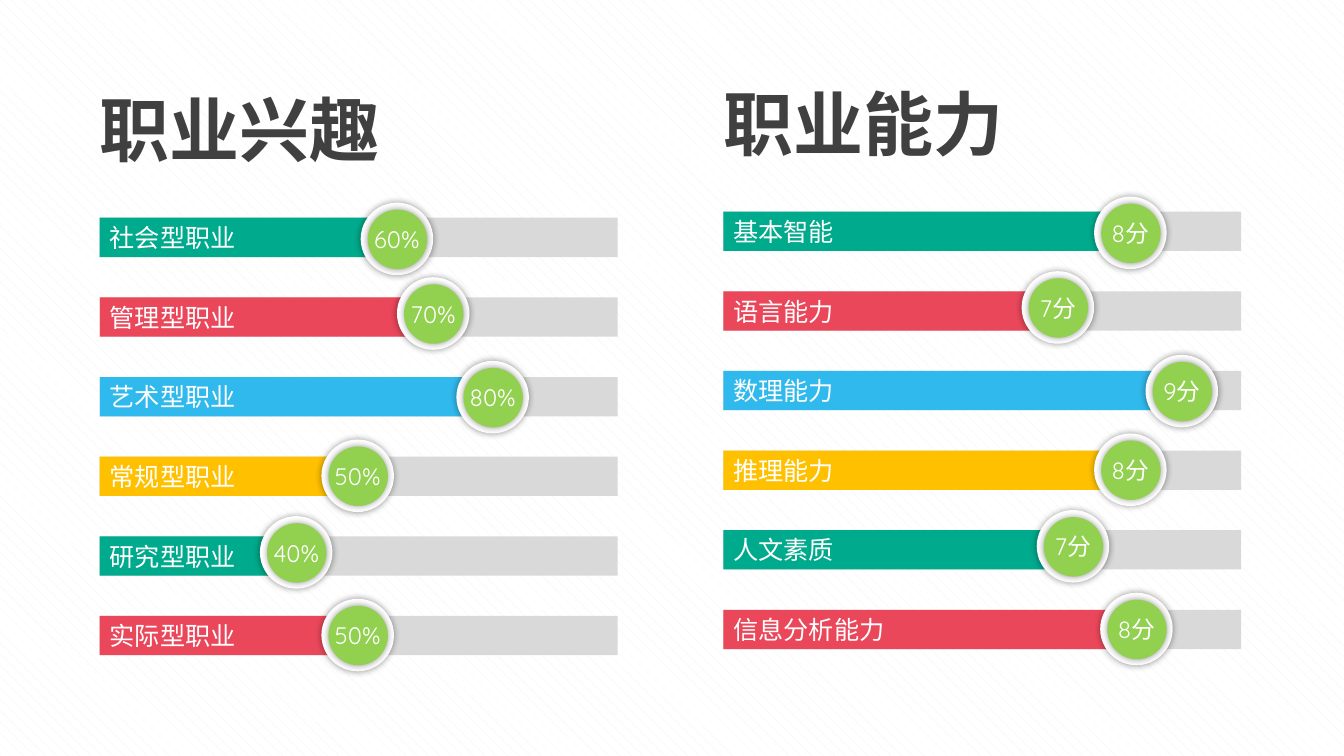
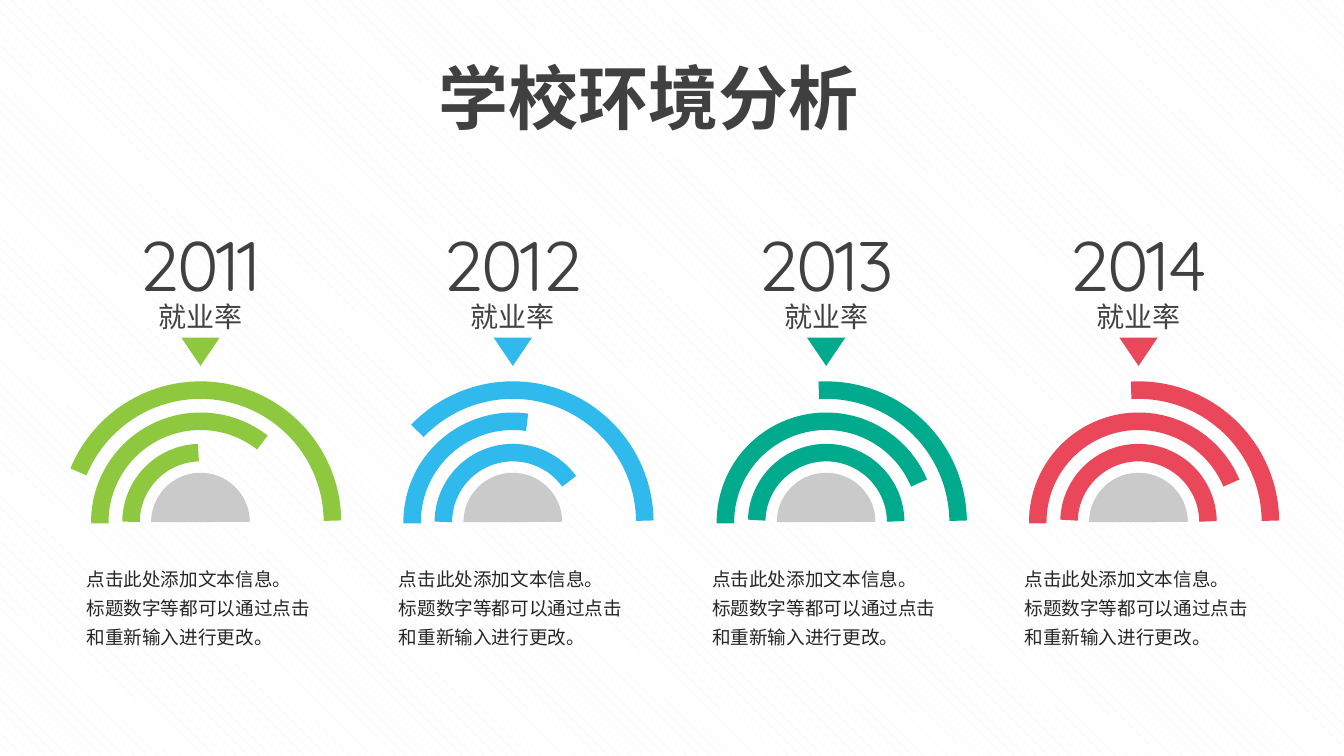
from lxml import etree
from pptx import Presentation
from pptx.dml.color import RGBColor
from pptx.enum import dml, shapes, text
from pptx.oxml.ns import qn
from pptx.util import Pt

SCALE = 9144  # EMU per px, 100 px to the inch
WIDTH, HEIGHT = 1334, 750
CJK, LATIN = "Noto Sans CJK SC", "Quicksand"
COLORS = {
    "white": "FFFFFF", "stripe": "F2F2F2", "track": "D9D9D9", "dome": "CACACA",
    "title": "404040", "body": "262626", "black": "000000", "knob": "92D050",
    "teal": "00AA8C", "red": "EB475B", "blue": "30B9EC", "yellow": "FFC000",
    "green": "8EC83E",
}
# Each style: font values, colour, then optional paragraph values and tracking
STYLES = {
    "title": {"font": {"name": CJK, "size": Pt(50), "bold": True}, "color": "title"},
    "bar": {"font": {"name": CJK, "size": Pt(18)}, "color": "white"},
    "knob": {"font": {"name": LATIN, "size": Pt(17)}, "color": "white"},
    "year": {"font": {"name": LATIN, "size": Pt(50)}, "color": "title", "track": "-150"},
    "caption": {"font": {"name": CJK, "size": Pt(20)}, "color": "title"},
    "body": {"font": {"name": CJK, "size": Pt(13.3)}, "color": "body",
             "para": {"line_spacing": 1.3}},
}
MSO = shapes.MSO_SHAPE
LEFT, CENTER = text.PP_ALIGN.LEFT, text.PP_ALIGN.CENTER


def px(*values):
    return [v * SCALE for v in values]


def rgb(name):
    return RGBColor.from_string(COLORS[name])


class Deck:
    def __init__(self):
        self.prs = Presentation()
        self.prs.slide_width, self.prs.slide_height = px(WIDTH, HEIGHT)
        # Striped background shared by every slide
        fill = self.prs.slide_master.background.fill
        fill.patterned()
        fill.pattern = dml.MSO_PATTERN.SHINGLE
        fill.fore_color.rgb, fill.back_color.rgb = rgb("stripe"), rgb("white")

    def slide(self):
        self.s = self.prs.slides.add_slide(self.prs.slide_layouts[6])
        self.ungroup()

    def group(self):
        self.target = self.s.shapes.add_group_shape().shapes

    def ungroup(self):
        self.target = self.s.shapes

    def set_text(self, tf, lines, style, align):
        st = STYLES[style]
        for i, line in enumerate(lines):
            p = tf.paragraphs[0] if i == 0 else tf.add_paragraph()
            for key, value in {"alignment": align, **st.get("para", {})}.items():
                setattr(p, key, value)
            r = p.add_run()
            r.text = line
            for key, value in st["font"].items():
                setattr(r.font, key, value)
            r.font.color.rgb = rgb(st["color"])
            rpr = r._r.get_or_add_rPr()
            etree.SubElement(rpr, qn("a:ea"), typeface=CJK)
            if "track" in st:
                rpr.set("spc", st["track"])

    def label(self, box, lines, style, align=LEFT, wrap=True):
        tf = self.target.add_textbox(*px(*box)).text_frame
        tf.word_wrap = wrap
        tf.auto_size = text.MSO_AUTO_SIZE.SHAPE_TO_FIT_TEXT
        self.set_text(tf, lines, style, align)

    def shape(self, kind, box, color, rotation=0):
        sp = self.target.add_shape(kind, *px(*box))
        sp.shadow.inherit = False
        sp.fill.solid()
        sp.fill.fore_color.rgb = rgb(color)
        sp.line.fill.background()
        sp.rotation = rotation
        return sp

    def bar(self, box, color, caption):
        tf = self.shape(MSO.RECTANGLE, box, color).text_frame
        tf.vertical_anchor = text.MSO_ANCHOR.MIDDLE
        self.set_text(tf, [caption], "bar", LEFT)

    def disc(self, x, y, size, color):
        sp = self.shape(MSO.OVAL, (x, y, size, size), color)
        effects = sp._element.spPr.find(qn("a:effectLst"))
        glow = etree.SubElement(effects, qn("a:outerShdw"), blurRad=str(Pt(5)),
                                dist="0", dir="0", algn="ctr", rotWithShape="0")
        clr = etree.SubElement(glow, qn("a:srgbClr"), val=COLORS["black"])
        etree.SubElement(clr, qn("a:alpha"), val="40000")

    def knob(self, x, y, value):
        self.group()
        self.disc(x, y, 72, "white")
        self.disc(x + 7, y + 7, 59, "knob")
        self.label((x, y + 17, 72, 38), [value], "knob", CENTER)
        self.ungroup()

    def dome(self, cx, cy, size):
        box = (cx - size // 2, cy - size // 2, size, size)
        sp = self.shape(MSO.PIE, box, "dome", 180)
        sp.adjustments[0], sp.adjustments[1] = 0, 107.69

    def arc(self, cx, cy, size, angles, color):
        box = (cx - size // 2, cy - size // 2, size, size)
        sp = self.shape(MSO.ARC, box, color, 90)
        sp.fill.background()
        sp.line.color.rgb = rgb(color)
        sp.line.width = Pt(12.5)
        sp.adjustments[0], sp.adjustments[1] = angles


# Slider panels: left, top, title, rows of (label, bar width, knob offset, value)
PANELS = [
    (99, 216, "职业兴趣", [
        ("社会型职业", 303, 259, "60%"), ("管理型职业", 338, 295, "70%"),
        ("艺术型职业", 391, 354, "80%"), ("常规型职业", 257, 220, "50%"),
        ("研究型职业", 196, 159, "40%"), ("实际型职业", 257, 220, "50%")]),
    (718, 210, "职业能力", [
        ("基本智能", 412, 368, "8分"), ("语言能力", 338, 296, "7分"),
        ("数理能力", 461, 419, "9分"), ("推理能力", 412, 368, "8分"),
        ("人文素质", 355, 311, "7分"), ("信息分析能力", 412, 374, "8分")]),
]
BAR_COLORS = ["teal", "red", "blue", "yellow", "teal", "red"]
KNOB_RISE = [15, 20, 16, 17, 20, 17]
ROW_PITCH, BAR_HEIGHT, TRACK_WIDTH = 79, 39, 514

# Yearly gauges: year, colour, arc angles from the inner ring outwards
LATE_ARCS = [(54.99, 161.62), (53.56, 148.33), (106.09, 161.62)]
GAUGES = [
    ("2011", "green", [(54.14, 106.93), (53.56, 130.74), (67.42, 161.62)]),
    ("2012", "blue", [(54.12, 140.46), (53.56, 112.88), (80.22, 161.62)]),
    ("2013", "teal", LATE_ARCS),
    ("2014", "red", LATE_ARCS),
]
ARC_SIZES = [138, 200, 262]
GAUGE_Y = 518
BODY = ["点击此处添加文本信息。", "标题数字等都可以通过点击和重新输入进行更改。"]


def sliders(deck):
    deck.slide()
    for left, top, title, rows in PANELS:
        deck.label((left - 10, top - 135, 524, 93), [title], "title")
        for i, (caption, width, offset, value) in enumerate(rows):
            y = top + i * ROW_PITCH
            deck.shape(MSO.RECTANGLE, (left, y, TRACK_WIDTH, BAR_HEIGHT), "track")
            deck.bar((left, y, width, BAR_HEIGHT), BAR_COLORS[i], caption)
            deck.knob(left + offset, y - KNOB_RISE[i], value)


def gauges(deck):
    deck.slide()
    deck.label((111, 49, 1066, 93), ["学校环境分析"], "title", CENTER)
    for i, (year, color, arcs) in enumerate(GAUGES):
        cx = round(199 + i * 310.4)
        deck.group()
        deck.dome(cx, GAUGE_Y, 98)
        for size, angles in zip(ARC_SIZES, arcs):
            deck.arc(cx, GAUGE_Y, size, angles, color)
        deck.shape(MSO.ISOSCELES_TRIANGLE, (cx - 19, 335, 38, 28), color, 180)
        deck.label((cx - 52, 292, 104, 43), ["就业率"], "caption", CENTER, False)
        deck.label((cx - 83, 215, 166, 93), [year], "year", CENTER, False)
        deck.label((cx - 123, 552, 245, 97), BODY, "body")


def main():
    deck = Deck()
    sliders(deck)
    gauges(deck)
    deck.prs.save("out.pptx")


if __name__ == "__main__":
    main()
